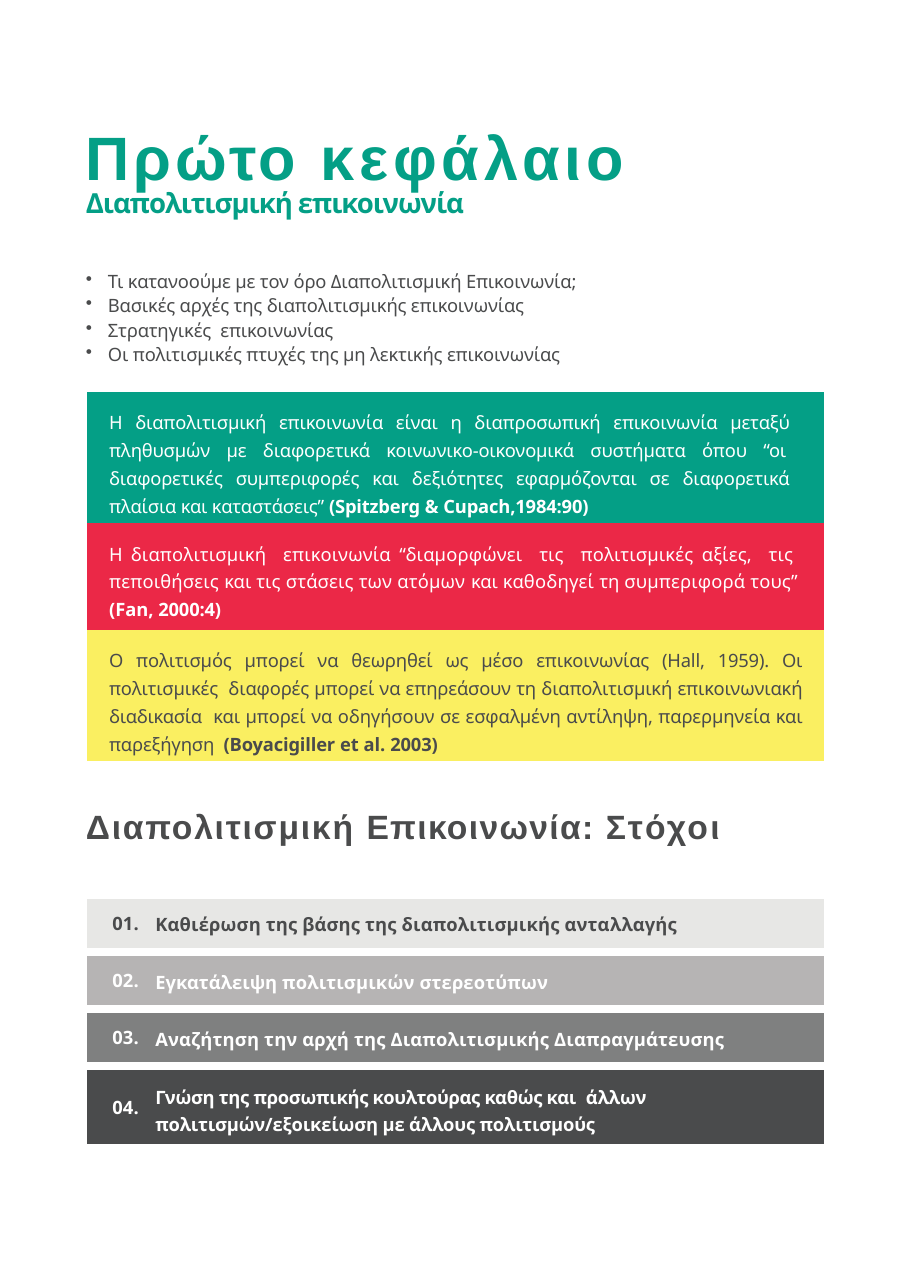
from dataclasses import dataclass

from lxml import etree
from pptx import Presentation
from pptx.dml.color import RGBColor
from pptx.enum.text import MSO_ANCHOR, MSO_AUTO_SIZE, PP_ALIGN
from pptx.oxml.ns import qn
from pptx.util import Inches, Pt

GREEN = RGBColor(0x04, 0x9F, 0x86)
RED = RGBColor(0xEB, 0x28, 0x47)
YELLOW = RGBColor(0xFA, 0xEF, 0x61)
DARK = RGBColor(0x4A, 0x4B, 0x4C)
MID_GRAY = RGBColor(0x7F, 0x80, 0x80)
SOFT_GRAY = RGBColor(0xB6, 0xB4, 0xB4)
PALE_GRAY = RGBColor(0xE7, 0xE7, 0xE5)
WHITE = RGBColor(0xFF, 0xFF, 0xFF)

LEFT, RIGHT, JUSTIFY = PP_ALIGN.LEFT, PP_ALIGN.RIGHT, PP_ALIGN.JUSTIFY
TOP, MIDDLE = MSO_ANCHOR.TOP, MSO_ANCHOR.MIDDLE
NO_AUTOSIZE = MSO_AUTO_SIZE.NONE
HEADING_FONT, BODY_FONT = "Arial", "Noto Sans"
PLAIN_TABLE_STYLE = "{2D5ABB26-0587-4C30-8999-92F81FD0307C}"


@dataclass
class Span:
    text: str
    spacing: float = 0
    bold: bool = False


@dataclass
class Style:
    font: str
    size: float
    color: RGBColor
    align: PP_ALIGN = LEFT
    indent: float = 0
    line_spacing: float = 1.0


@dataclass
class Definition:
    fill: RGBColor
    color: RGBColor
    height: float
    spans: list[Span]


@dataclass
class Goal:
    fill: RGBColor
    color: RGBColor
    height: float
    top_inset: float
    line_spacing: float
    spans: list[Span]


def write(paragraph, spans: list[Span], style: Style) -> None:
    paragraph.alignment = style.align
    paragraph.line_spacing = style.line_spacing
    paragraph._p.get_or_add_pPr().set("marL", str(Inches(style.indent)))
    paragraph.font.name = style.font
    paragraph.font.size = Pt(style.size)
    paragraph.font.color.rgb = style.color
    for span in spans:
        run = paragraph.add_run()
        run.text = span.text
        run.font.bold = span.bold
        run._r.get_or_add_rPr().set("spc", str(round(span.spacing * 100)))


def prepare_frame(shape, box: tuple[float, float, float, float], top_inset: float):
    shape.left, shape.top, shape.width, shape.height = map(Inches, box)
    frame = shape.text_frame
    frame.word_wrap = True
    frame.auto_size = NO_AUTOSIZE
    frame.vertical_anchor = TOP
    frame.margin_left = frame.margin_right = frame.margin_bottom = 0
    frame.margin_top = Inches(top_inset)
    return frame


def add_text(slide, box: tuple[float, float, float, float], top_inset: float = 0.01):
    return prepare_frame(slide.shapes.add_textbox(*map(Inches, box)), box, top_inset)


def add_plain_table(slide, left: float, top: float, columns: list[float], rows: list[float]):
    table = slide.shapes.add_table(
        len(rows), len(columns), Inches(left), Inches(top),
        Inches(sum(columns)), Inches(sum(rows))).table
    table.first_row = table.horz_banding = False
    table._tbl.tblPr.find(qn("a:tableStyleId")).text = PLAIN_TABLE_STYLE
    for column, width in zip(table.columns, columns):
        column.width = Inches(width)
    for row, height in zip(table.rows, rows):
        row.height = Inches(height)
    return table


def add_border(cell, side: str) -> None:
    line = etree.SubElement(cell._tc.get_or_add_tcPr(), qn(f"a:{side}"), w=str(Pt(6)))
    solid = etree.SubElement(line, qn("a:solidFill"))
    etree.SubElement(solid, qn("a:srgbClr"), val=str(WHITE))


def fill_cell(cell, fill: RGBColor, spans: list[Span], style: Style,
              top_inset: float, right_inset: float = 0, anchor: MSO_ANCHOR = TOP) -> None:
    cell.fill.solid()
    cell.fill.fore_color.rgb = fill
    cell.margin_left = cell.margin_bottom = 0
    cell.margin_top, cell.margin_right = Inches(top_inset), Inches(right_inset)
    cell.vertical_anchor = anchor
    write(cell.text_frame.paragraphs[0], spans, style)


TOPICS = [
    "Τι κατανοούμε με τον όρο Διαπολιτισμική Επικοινωνία;",
    "Βασικές αρχές της διαπολιτισμικής επικοινωνίας",
    "Στρατηγικές  επικοινωνίας",
    "Οι πολιτισμικές πτυχές της μη λεκτικής επικοινωνίας",
]

DEFINITIONS = [
    Definition(GREEN, WHITE, 1.19, [
        Span("Η διαπολιτισμική επικοινωνία είναι η διαπροσωπική επικοινωνία μεταξύ  "
             "πληθυσμών με διαφορετικά κοινωνικο-οικονομικά συστήματα όπου “οι  "
             "διαφορετικές συμπεριφορές και δεξιότητες εφαρμόζονται σε διαφορετικά  "
             "πλαίσια και καταστάσεις” ", -0.1),
        Span("(Spitzberg ", -0.1, True), Span("& ", 0, True),
        Span("Cupach,1984:90)", -0.1, True)]),
    Definition(RED, WHITE, 0.97, [
        Span("Η ", -0.1),
        Span("διαπολιτισμική  επικοινωνία “διαμορφώνει  τις  πολιτισμικές αξίες,  τις  "
             "πεποιθήσεις ", 0.1),
        Span("και "), Span("τις στάσεις των ατόμων ", 0.1), Span("και "),
        Span("καθοδηγεί ", 0.1), Span("τη "), Span("συμπεριφορά τους”  ", 0.1),
        Span("(Fan,", 0, True), Span(" 2000:4)", -0.1, True)]),
    Definition(YELLOW, DARK, 1.19, [
        Span("Ο πολιτισμός μπορεί να θεωρηθεί ως μέσο επικοινωνίας (Hall, 1959). Οι "
             "πολιτισμικές  διαφορές μπορεί να επηρεάσουν τη διαπολιτισμική "
             "επικοινωνιακή ", -0.1),
        Span("διαδικασία  ", -0.2),
        Span("και μπορεί να οδηγήσουν σε εσφαλμένη αντίληψη, παρερμηνεία και "
             "παρεξήγηση  ", -0.1),
        Span("(Boyacigiller ", -0.1, True), Span("et al. ", 0, True),
        Span("2003)", -0.1, True)]),
]

GOALS = [
    Goal(PALE_GRAY, DARK, 0.52, 0.16, 1.0, [
        Span("Καθιέρωση της βάσης της διαπολιτισμικής ανταλλαγής", 0.1, True)]),
    Goal(SOFT_GRAY, WHITE, 0.52, 0.16, 1.0, [
        Span("Εγκατάλειψη ", 0, True), Span("πολιτισμικών στερεοτύπων", 0.1, True)]),
    Goal(MID_GRAY, WHITE, 0.52, 0.16, 1.0, [
        Span("Αναζήτηση την αρχή της Διαπολιτισμικής Διαπραγμάτευσης", 0.1, True)]),
    Goal(DARK, WHITE, 0.74, 0.14, 1.11, [
        Span("Γνώση της προσωπικής κουλτούρας καθώς και  ", -0.2, True),
        Span("άλλων πολιτισμών/εξοικείωση με άλλους πολιτισμούς", -0.1, True)]),
]


def main() -> None:
    deck = Presentation()
    deck.slide_width, deck.slide_height = Inches(8.26), Inches(11.69)
    slide = deck.slides.add_slide(deck.slide_layouts[5])

    # Chapter title and subtitle
    title = prepare_frame(slide.shapes.title, (0.77, 1.07, 5.01, 0.69), 0.01)
    write(title.paragraphs[0], [Span("Πρώτο ", 2.5, True), Span("κεφάλαιο", 3.2, True)],
          Style(HEADING_FONT, 40, GREEN, indent=0.01))
    subtitle = add_text(slide, (0.77, 1.68, 3.51, 0.33))
    write(subtitle.paragraphs[0], [Span("Διαπολιτισμική επικοινωνία", -0.7, True)],
          Style(BODY_FONT, 18, GREEN, indent=0.01))

    # Topic list
    topics = add_text(slide, (0.77, 2.41, 5.19, 0.93), 0.04)
    for index, topic in enumerate(TOPICS):
        paragraph = topics.add_paragraph() if index else topics.paragraphs[0]
        properties = paragraph._p.get_or_add_pPr()
        properties.set("indent", str(Inches(-0.2)))
        etree.SubElement(properties, qn("a:buChar"), char="•")
        if index:
            paragraph.space_before = Pt(1.6)
        write(paragraph, [Span(topic, -0.1)], Style(BODY_FONT, 12, DARK, indent=0.21))

    # Definitions
    definitions = add_plain_table(slide, 0.79, 3.56, [6.69], [d.height for d in DEFINITIONS])
    for row, item in enumerate(DEFINITIONS):
        fill_cell(definitions.cell(row, 0), item.fill, item.spans,
                  Style(BODY_FONT, 12, item.color, JUSTIFY, 0.2, 1.11), 0.14, 0.19)

    # Goals heading
    heading = add_text(slide, (0.77, 7.3, 5.9, 0.39))
    write(heading.paragraphs[0],
          [Span("Διαπολιτισμική ", 1.2, True), Span("Επικοινωνία: ", 0.9, True),
           Span("Στόχοι", 1.6, True)],
          Style(HEADING_FONT, 22, DARK, indent=0.01))

    # Numbered goals
    goals = add_plain_table(slide, 0.79, 8.12, [0.54, 6.15], [g.height for g in GOALS])
    for cell in goals.iter_cells():
        add_border(cell, "lnT")
        add_border(cell, "lnB")
    for row, goal in enumerate(GOALS):
        fill_cell(goals.cell(row, 0), goal.fill, [Span(f"{row + 1:02}.", 0.1, True)],
                  Style(BODY_FONT, 12, goal.color, RIGHT), 0, 0.07, MIDDLE)
        fill_cell(goals.cell(row, 1), goal.fill, goal.spans,
                  Style(BODY_FONT, 12, goal.color, LEFT, 0.08, goal.line_spacing),
                  goal.top_inset)

    deck.save("out.pptx")


if __name__ == "__main__":
    main()
